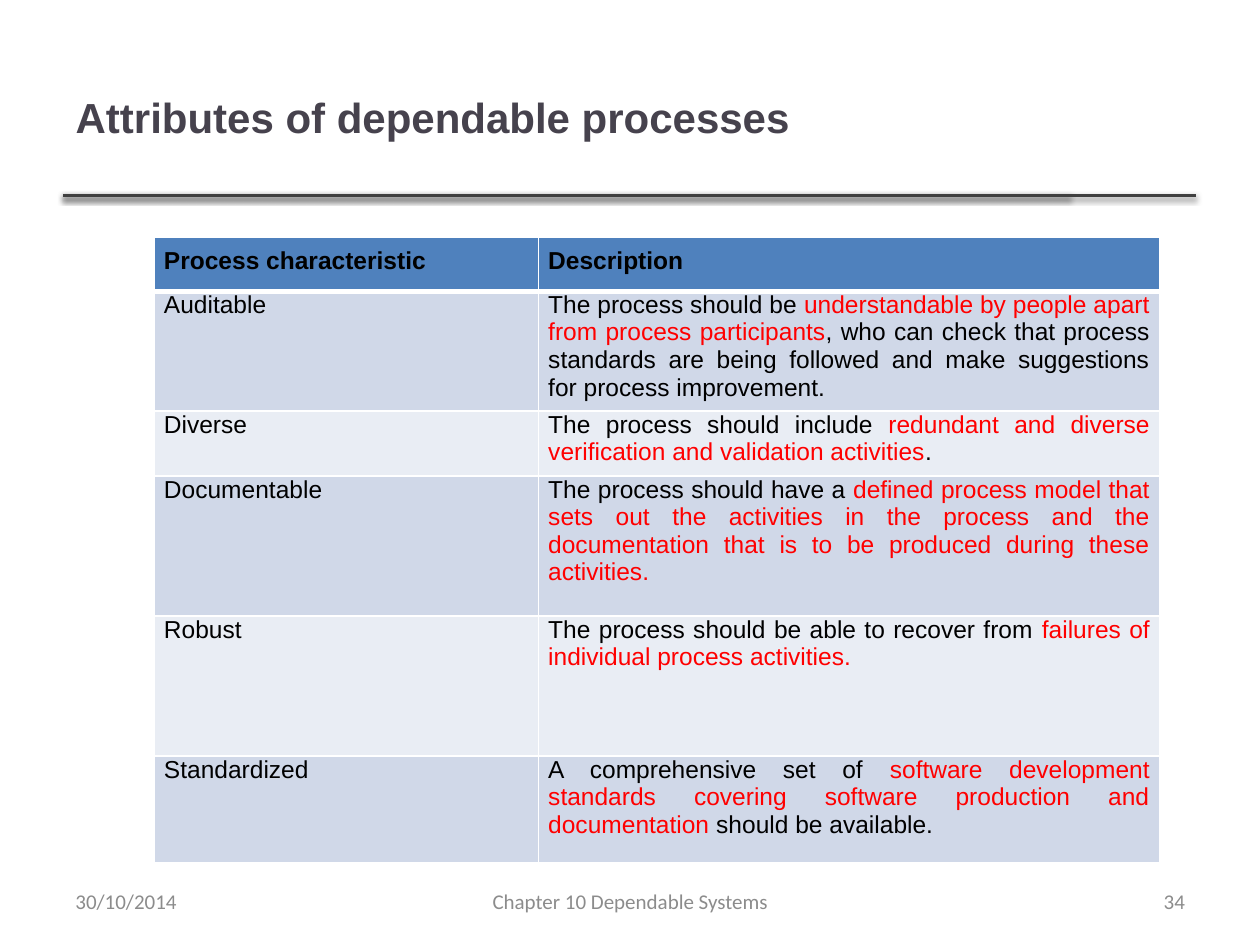
from dataclasses import dataclass
from lxml.etree import fromstring
from pptx import Presentation as Deck
from pptx.dml.color import RGBColor as Color
from pptx.enum.shapes import MSO_CONNECTOR as Link
from pptx.enum.text import MSO_ANCHOR as Anchor, PP_ALIGN as Align
from pptx.util import Pt


@dataclass(frozen=True)
class Theme:
    title: str = "46424D"
    rule: str = "404040"
    text: str = "000000"
    mark: str = "FF0000"
    foot: str = "8C8C8C"
    head: str = "4F81BD"
    odd: str = "D0D8E8"
    even: str = "E9EDF4"
    edge: str = "FFFFFF"
    big: int = 24
    mid: int = 14
    small: int = 12


theme = Theme()
NS = 'xmlns:a="http://schemas.openxmlformats.org/drawingml/2006/main"'


def apply(item, form):
    for name, value in form.items():
        setattr(item, name, value)


def write(para, text, form, color):
    run = para.add_run()
    run.text = text
    apply(run.font, form)
    run.font.color.rgb = Color.from_string(color)


deck = Deck()
apply(deck, {"slide_width": Pt(720), "slide_height": Pt(540)})
slide = deck.slides.add_slide(deck.slide_layouts[5])
shapes = slide.shapes

for right in (611.3, 683.3):
    line = shapes.add_connector(Link.STRAIGHT, Pt(36), Pt(111.6), Pt(right), Pt(111.6))
    line.line.width = Pt(2)
    line.line.color.rgb = Color.from_string(theme.rule)
    line._element.spPr.append(fromstring(
        f'<a:effectLst {NS}><a:outerShdw blurRad="{Pt(3.1)}" dist="{Pt(1.6)}" '
        f'dir="5400000" rotWithShape="0"><a:srgbClr val="{theme.text}">'
        '<a:alpha val="38000"/></a:srgbClr></a:outerShdw></a:effectLst>'))

title = shapes.title
apply(title, {"left": Pt(36), "top": Pt(21.6), "width": Pt(574.6), "height": Pt(90)})
title.text_frame.vertical_anchor = Anchor.MIDDLE
para = title.text_frame.paragraphs[0]
para.alignment = Align.LEFT
write(para, "Attributes of dependable processes",
      {"name": "Arial", "size": Pt(theme.big), "bold": True}, theme.title)

rows = [
    ("Process characteristic", ["Description"]),
    ("Auditable", [
        "The process should be ",
        "understandable by people apart from process participants",
        ", who can check that process standards are being followed and make "
        "suggestions for process improvement."]),
    ("Diverse", [
        "The process should include ",
        "redundant and diverse verification and validation activities", "."]),
    ("Documentable", [
        "The process should have a ",
        "defined process model that sets out the activities in the process and the "
        "documentation that is to be produced during these activities."]),
    ("Robust", [
        "The process should be able to recover from ",
        "failures of individual process activities."]),
    ("Standardized", [
        "A comprehensive set of ",
        "software development standards covering software production and documentation",
        " should be available."]),
]
tall = [31, 31, 31, 80, 80, 61]
grid = shapes.add_table(len(rows), 2, Pt(88.1), Pt(135.4), Pt(574.6), Pt(sum(tall))).table
for col, wide in zip(grid.columns, (219.6, 355)):
    col.width = Pt(wide)

for r, (name, parts) in enumerate(rows):
    top = r == 0
    grid.rows[r].height = Pt(tall[r])
    fill = theme.head if top else theme.odd if r % 2 else theme.even
    for c, texts in enumerate(([name], parts)):
        cell = grid.cell(r, c)
        apply(cell, {"margin_left": Pt(5.6), "margin_right": Pt(5.6),
                     "margin_top": Pt(5.6 if top else 0), "margin_bottom": Pt(5.6)})
        for side in "LRTB":
            wide = 3 if (top and side == "B") or (r == 1 and side == "T") else 1
            cell._tc.get_or_add_tcPr().append(fromstring(
                f'<a:ln{side} {NS} w="{Pt(wide)}"><a:solidFill>'
                f'<a:srgbClr val="{theme.edge}"/></a:solidFill></a:ln{side}>'))
        cell.fill.solid()
        cell.fill.fore_color.rgb = Color.from_string(fill)
        para = cell.text_frame.paragraphs[0]
        para.alignment = Align.JUSTIFY
        for i, text in enumerate(texts):
            write(para, text, {"name": "Arial", "size": Pt(theme.mid), "bold": top},
                  theme.mark if i == 1 else theme.text)

for left, wide, side, text in (
        (516.2, 168, Align.RIGHT, "34"),
        (246.2, 228, Align.CENTER, "Chapter 10 Dependable Systems"),
        (36, 168, Align.LEFT, "30/10/2014")):
    frame = shapes.add_textbox(Pt(left), Pt(500.4), Pt(wide), Pt(28.8)).text_frame
    apply(frame, {"word_wrap": True, "vertical_anchor": Anchor.MIDDLE})
    para = frame.paragraphs[0]
    para.alignment = side
    write(para, text, {"name": "Calibri", "size": Pt(theme.small)}, theme.foot)

deck.save("out.pptx")
